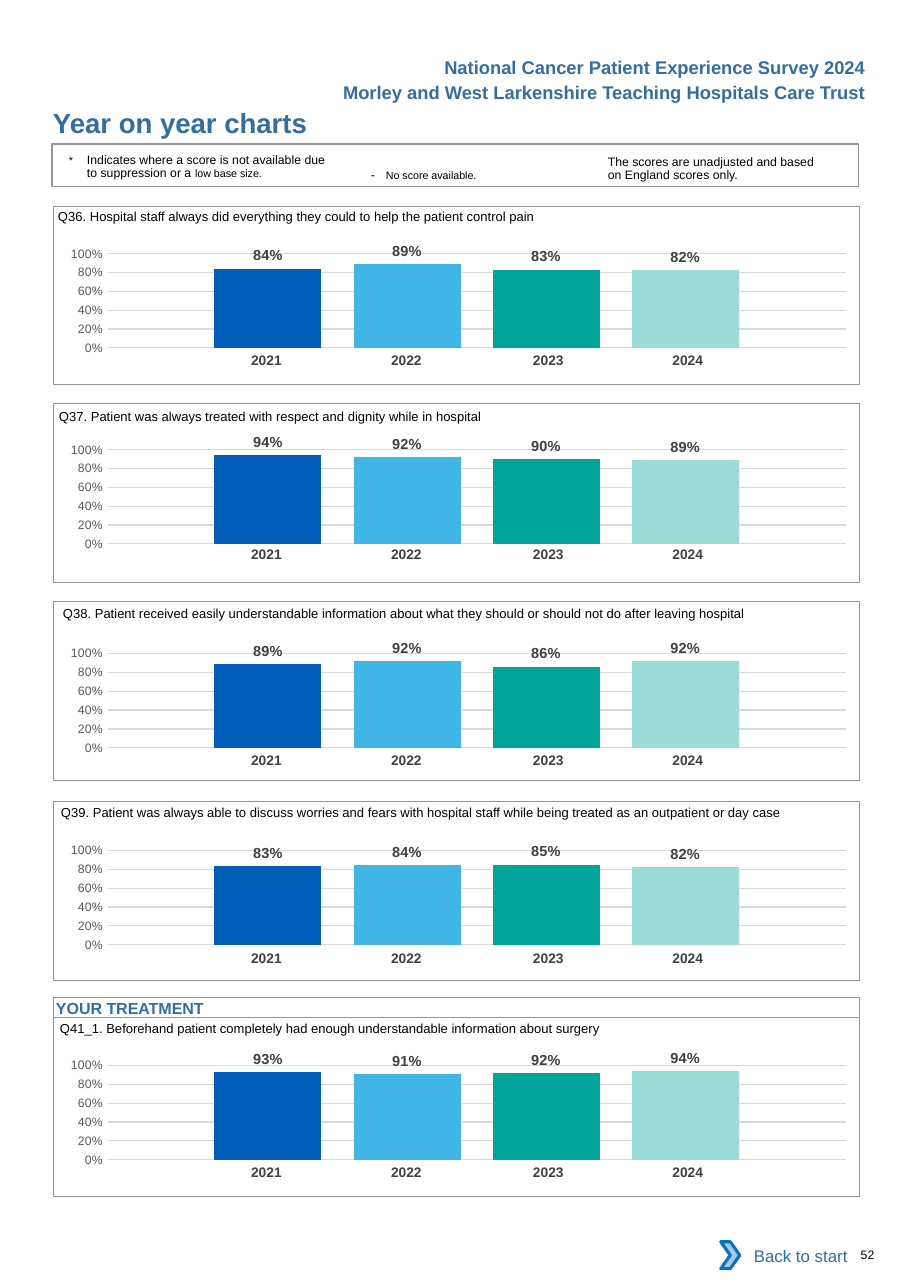
from pptx import Presentation
from pptx.chart import data
from pptx.dml import color
from pptx.enum import chart as charts, shapes, text
from pptx.oxml import parse_xml
from pptx.oxml import ns
from pptx import util as u

SCALE = 914400 / 110.2
HUES = {
    "blue": "336E9F", "black": "000000", "edge": "939598", "white": "FFFFFF",
    "year": "414042", "label": "404040", "tick": "595959", "grid": "D9D9D9",
    "arrow": "A8C7E9", "rim": "0A74BB",
}
BARS = ["005EB8", "41B6E6", "00A499", "9CDCD7"]
YEARS = ["2021", "2022", "2023", "2024"]
COLS = [140, 140, 148, 140]
PADS = [0, 0, 4, 13]
LAYOUT = {"x": 0.08, "y": 0.145, "w": 0.915, "h": 0.666}
NO_STYLE = "{2D5ABB26-0587-4C30-8999-92F81FD0307C}"
LEFT, TOP = text.PP_ALIGN.LEFT, text.MSO_ANCHOR.TOP
RIGHT, MIDDLE = text.PP_ALIGN.RIGHT, text.MSO_ANCHOR.MIDDLE

PANELS = [
    (206, 233, 348, 58, 209, [0.84, 0.89, 0.83, 0.82],
     "Q36. Hospital staff always did everything they could to help the patient control pain"),
    (404, 429, 542, 59, 409, [0.94, 0.92, 0.90, 0.89],
     "Q37. Patient was always treated with respect and dignity while in hospital"),
    (602, 633, 748, 63, 606, [0.89, 0.92, 0.86, 0.92],
     "Q38. Patient received easily understandable information about what they should "
     "or should not do after leaving hospital"),
    (802, 830, 946, 61, 805, [0.83, 0.84, 0.85, 0.82],
     "Q39. Patient was always able to discuss worries and fears with hospital staff "
     "while being treated as an outpatient or day case"),
    (1018, 1045, 1160, 60, 1021, [0.93, 0.91, 0.92, 0.94],
     "Q41_1. Beforehand patient completely had enough understandable information about surgery"),
]


def px(n):
    return u.Emu(round(n * SCALE))


def area(*spans):
    return [px(n) for n in spans]


def hue(name):
    return color.RGBColor.from_string(HUES[name])


def style(font, size, tint, bold=False):
    font.name = "Arial"
    font.size = u.Pt(size)
    font.bold = bold
    font.color.rgb = hue(tint)


def write(shape, words, size, tint="black", bold=False, align=LEFT, anchor=TOP, pads=(0, 0, 0, 0)):
    frame = shape.text_frame
    frame.word_wrap = True
    frame.vertical_anchor = anchor
    (frame.margin_left, frame.margin_top,
     frame.margin_right, frame.margin_bottom) = area(*pads)
    para = frame.paragraphs[0]
    para.text = words
    para.alignment = align
    style(para.font, size, tint, bold)
    return para


def label(slide, spot, words, size, **looks):
    return write(slide.shapes.add_textbox(*area(*spot)), words, size, **looks)


def hang(para, step):
    props = para._p.get_or_add_pPr()
    props.set("marL", str(px(step)))
    props.set("indent", str(-px(step)))


def resize(para, words, size):
    run = para.add_run()
    run.text = words
    run.font.size = u.Pt(size)


def shade(slide, kind, spot, fill=None, line=None, width=0.5):
    shape = slide.shapes.add_shape(kind, *area(*spot))
    shape.shadow.inherit = False
    if fill:
        shape.fill.solid()
        shape.fill.fore_color.rgb = hue(fill)
    else:
        shape.fill.background()
    if line:
        shape.line.color.rgb = hue(line)
        shape.line.width = u.Pt(width)
    else:
        shape.line.fill.background()
    return shape


def box(slide, *spot, **looks):
    return shade(slide, shapes.MSO_SHAPE.RECTANGLE, spot, **looks)


def place(chart):
    plot = chart._chartSpace.chart.plotArea
    for old in plot.findall(ns.qn("c:layout")):
        plot.remove(old)
    modes = "".join(f'<c:{k}Mode val="edge"/>' for k in "xy")
    sizes = "".join(f'<c:{k} val="{v}"/>' for k, v in LAYOUT.items())
    plot.insert(0, parse_xml(
        f'<c:layout {ns.nsdecls("c")}><c:manualLayout><c:layoutTarget val="inner"/>'
        f'{modes}{sizes}</c:manualLayout></c:layout>'))


def scale(axis):
    axis.minimum_scale, axis.maximum_scale, axis.major_unit = 0, 1, 0.2
    axis.major_tick_mark = charts.XL_TICK_MARK.NONE
    axis.format.line.fill.background()
    axis.major_gridlines.format.line.color.rgb = hue("grid")
    axis.major_gridlines.format.line.width = u.Pt(0.75)
    ticks = axis.tick_labels
    ticks.number_format = "0%"
    ticks.number_format_is_linked = False
    style(ticks.font, 8, "tick")


def graph(slide, top, scores):
    rows = data.CategoryChartData(number_format="0%")
    rows.categories = ["1"]
    for i, score in enumerate(scores, 1):
        rows.add_series(f"Series {i}", [score])
    chart = slide.shapes.add_chart(
        charts.XL_CHART_TYPE.COLUMN_CLUSTERED, *area(43, top, 807, 142), rows).chart
    chart.has_title = chart.has_legend = False
    chart.font.name = "Calibri"
    chart.font.size = u.Pt(10)
    chart.category_axis.visible = False
    scale(chart.value_axis)
    plot = chart.plots[0]
    plot.gap_width, plot.overlap = 200, -30
    plot.vary_by_categories = False
    for bar, tint in zip(plot.series, BARS):
        bar.format.fill.solid()
        bar.format.fill.fore_color.rgb = color.RGBColor.from_string(tint)
        marks = bar.data_labels
        marks.show_value = True
        marks.position = charts.XL_LABEL_POSITION.OUTSIDE_END
        marks.number_format = "0%"
        marks.number_format_is_linked = False
        style(marks.font, 9.5, "label", True)
    place(chart)


def years(slide, top):
    grid = slide.shapes.add_table(1, len(YEARS), *area(191, top, sum(COLS), 30)).table
    grid.first_row = grid.horz_banding = False
    grid._tbl.tblPr.find(ns.qn("a:tableStyleId")).text = NO_STYLE
    grid.rows[0].height = px(30)
    for i, (year, width, pad) in enumerate(zip(YEARS, COLS, PADS)):
        grid.columns[i].width = px(width)
        cell = grid.cell(0, i)
        cell.fill.background()
        (cell.margin_left, cell.margin_top,
         cell.margin_right, cell.margin_bottom) = area(11, 5, pad, 5)
        para = cell.text_frame.paragraphs[0]
        para.text = year
        para.alignment = text.PP_ALIGN.CENTER
        style(para.font, 9, "year", True)


def panel(slide, top, plot, row, left, head, scores, words):
    graph(slide, plot, scores)
    years(slide, row)
    label(slide, (left, head, 790, 16), words, 8.5)
    box(slide, 53, top, 807, 179, line="edge")


def notes(slide):
    box(slide, 52, 144, 807, 43, line="edge", width=0.75)
    para = label(slide, (69, 155, 262, 28), "", 8)
    resize(para, "*\t", 7)
    resize(para, "Indicates where a score is not available due to suppression or a ", 8)
    resize(para, "low base size.", 7)
    hang(para, 18)
    para.line_spacing = u.Pt(8.1)
    para = label(slide, (371, 167, 180, 15), "", 8)
    resize(para, "-\t", 8)
    resize(para, "No score available.", 7)
    hang(para, 15)
    para = label(slide, (608, 157, 215, 28),
                 "The scores are unadjusted and based on England scores only.", 8)
    para.line_spacing = u.Pt(8.1)


def main():
    deck = Presentation()
    deck.slide_width, deck.slide_height = u.Inches(8.26), u.Inches(11.69)
    slide = deck.slides.add_slide(deck.slide_layouts[6])
    heads = ["National Cancer Patient Experience Survey 2024",
             "Morley and West Larkenshire Teaching Hospitals Care Trust"]
    for i, words in enumerate(heads):
        label(slide, (316, 56 + 25 * i, 550, 22), words, 12,
              tint="blue", bold=True, align=RIGHT)
    label(slide, (53, 106, 496, 33), "Year on year charts", 18, tint="blue", bold=True)
    notes(slide)
    for item in PANELS:
        panel(slide, *item)
    write(box(slide, 53, 998, 807, 20, line="edge"), "YOUR TREATMENT", 10.5,
          tint="blue", bold=True, pads=(3, 1, 0, 0))
    write(box(slide, 729, 1233, 130, 46, fill="white"), "Back to start", 11,
          tint="blue", align=RIGHT, anchor=MIDDLE, pads=(11, 5, 11, 5))
    shade(slide, shapes.MSO_SHAPE.CHEVRON, (721, 1242, 19, 27),
          fill="arrow", line="rim", width=2)
    label(slide, (861, 1248, 46, 15), "52", 8)
    deck.save("out.pptx")


if __name__ == "__main__":
    main()
